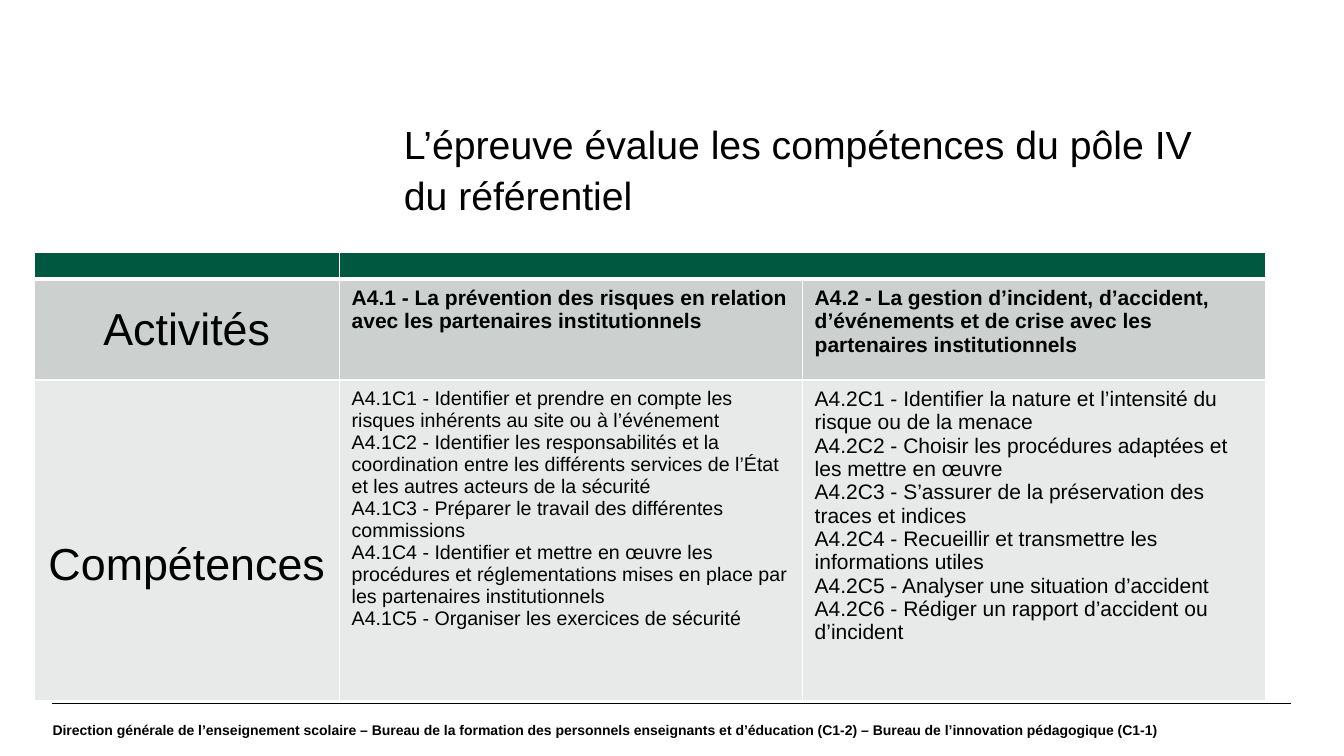
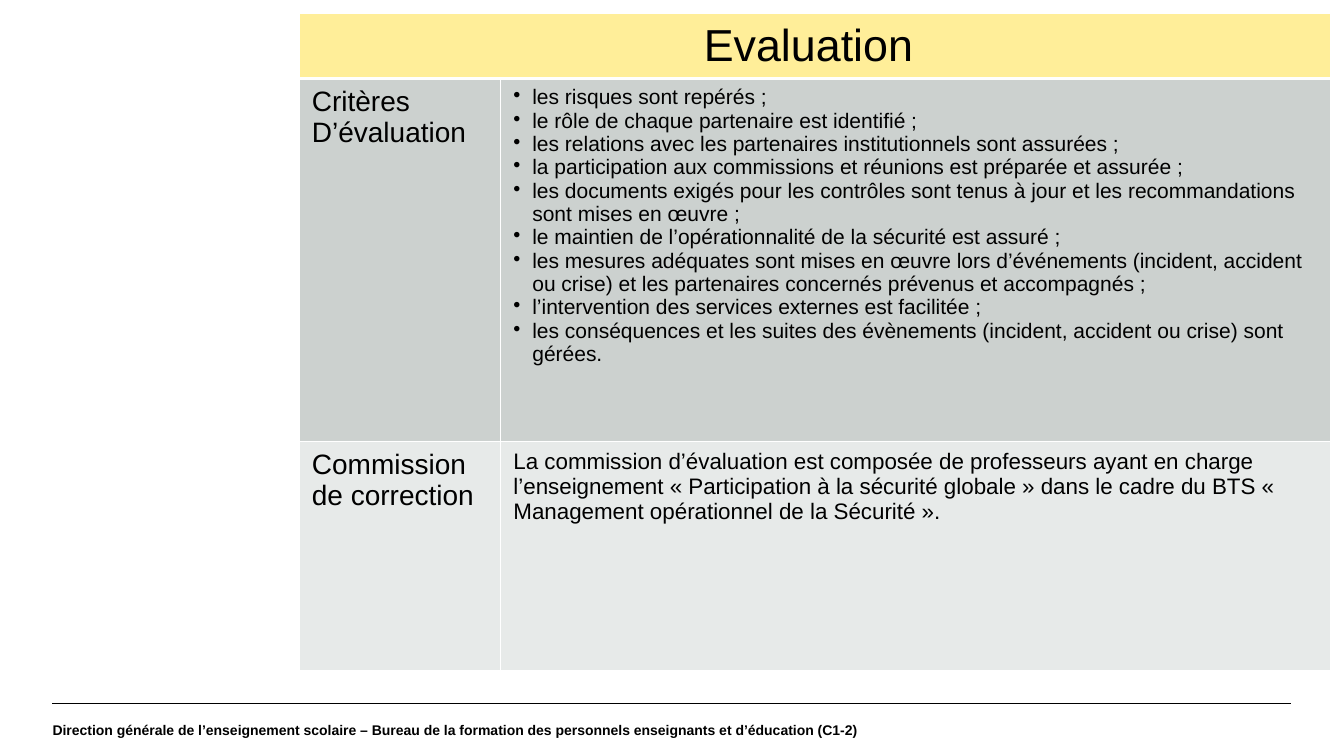
from dataclasses import dataclass

from pptx import Presentation
from pptx.dml.color import RGBColor
from pptx.enum.shapes import MSO_CONNECTOR
from pptx.enum.text import MSO_ANCHOR, MSO_AUTO_SIZE, PP_ALIGN
from pptx.oxml.ns import qn
from pptx.oxml.xmlchemy import OxmlElement
from pptx.util import Emu, Pt


@dataclass(frozen=True)
class Theme:
    font: str = "Arial"
    ink: str = "000000"
    rule: str = "FFFFFF"
    green: str = "005841"
    yellow: str = "FFEE99"
    grey: str = "CCD1CF"
    pale: str = "E7EAE9"
    title: int = 28
    heading: int = 32
    label: int = 20
    text: int = 16
    body: int = 15
    small: int = 14
    footer: int = 10


THEME = Theme()
TITLE_ONLY, BLANK = 5, 6
LEFT, CENTER = PP_ALIGN.LEFT, PP_ALIGN.CENTER
TOP, MIDDLE = MSO_ANCHOR.TOP, MSO_ANCHOR.MIDDLE

OFFICE = (
    "Direction générale de l’enseignement scolaire – Bureau de la formation "
    "des personnels enseignants et d’éducation (C1-2)"
)
PREVENTION_SKILLS = [
    "A4.1C1 - Identifier et prendre en compte les risques inhérents au site ou à l’événement",
    "A4.1C2 - Identifier les responsabilités et la coordination entre les différents "
    "services de l’État et les autres acteurs de la sécurité",
    "A4.1C3 - Préparer le travail des différentes commissions",
    "A4.1C4 - Identifier et mettre en œuvre les procédures et réglementations "
    "mises en place par les partenaires institutionnels",
    "A4.1C5 - Organiser les exercices de sécurité",
]
INCIDENT_SKILLS = [
    "A4.2C1 - Identifier la nature et l’intensité du risque ou de la menace",
    "A4.2C2 - Choisir les procédures adaptées et les mettre en œuvre",
    "A4.2C3 - S’assurer de la préservation des traces et indices",
    "A4.2C4 - Recueillir et transmettre les informations utiles",
    "A4.2C5 - Analyser une situation d’accident",
    "A4.2C6 - Rédiger un rapport d’accident ou d’incident",
]
CRITERIA = [
    "les risques sont repérés ;",
    "le rôle de chaque partenaire est identifié ;",
    "les relations avec les partenaires institutionnels sont assurées ;",
    "la participation aux commissions et réunions est préparée et assurée ;",
    "les documents exigés pour les contrôles sont tenus à jour et les "
    "recommandations sont mises en œuvre ;",
    "le maintien de l’opérationnalité de la sécurité est assuré ;",
    "les mesures adéquates sont mises en œuvre lors d’événements (incident, accident "
    "ou crise) et les partenaires concernés prévenus et accompagnés ;",
    "l’intervention des services externes est facilitée ;",
    "les conséquences et les suites des évènements (incident, accident ou crise) sont gérées.",
]


def px(n):
    return Emu(n * 9525)


def rgb(value):
    return RGBColor.from_string(value)


def add_run(p, text, size, bold=False):
    r = p.add_run()
    r.text = text
    r.font.name = THEME.font
    r.font.size = Pt(size)
    r.font.bold = bold
    r.font.color.rgb = rgb(THEME.ink)


def add_bullet(p, indent=18):
    pPr = p._p.get_or_add_pPr()
    pPr.set("marL", str(px(indent)))
    pPr.set("indent", str(-px(indent)))
    bullet = OxmlElement("a:buChar")
    bullet.set("char", "•")
    pPr.append(bullet)


def write(tf, lines, size, bold=False, align=LEFT, bullets=False):
    for i, line in enumerate(lines):
        p = tf.add_paragraph() if i else tf.paragraphs[0]
        p.alignment = align
        if bullets:
            add_bullet(p)
        add_run(p, line, size, bold)


def set_margins(box, left, top, right, bottom):
    box.margin_left, box.margin_top = px(left), px(top)
    box.margin_right, box.margin_bottom = px(right), px(bottom)


def set_borders(cell, bottom=1):
    tcPr = cell._tc.get_or_add_tcPr()
    widths = {"lnL": 1, "lnR": 1, "lnT": 1, "lnB": bottom}
    for i, (side, width) in enumerate(widths.items()):
        ln = OxmlElement(f"a:{side}")
        ln.set("w", str(Pt(width)))
        fill = OxmlElement("a:solidFill")
        color = OxmlElement("a:srgbClr")
        color.set("val", THEME.rule)
        fill.append(color)
        ln.append(fill)
        tcPr.insert(i, ln)


def fill_cell(cell, lines, size, anchor=TOP, top=7, **style):
    set_margins(cell, 12, top, 12, 7)
    cell.vertical_anchor = anchor
    write(cell.text_frame, lines, size, **style)


def add_table(slide, x, y, cols, rows, colors):
    frame = slide.shapes.add_table(
        len(rows), len(cols), px(x), px(y), px(sum(cols)), px(sum(rows))
    )
    table = frame.table
    table.first_row = table.horz_banding = False
    for col, width in zip(table.columns, cols):
        col.width = px(width)
    for i, (row, height, color) in enumerate(zip(table.rows, rows, colors)):
        row.height = px(height)
        for cell in row.cells:
            cell.fill.solid()
            cell.fill.fore_color.rgb = rgb(color)
            set_borders(cell, bottom=1 if i else 3)
    return table


def flatten_cell(cell):
    set_margins(cell, 0, 0, 0, 0)
    end = OxmlElement("a:endParaRPr")
    end.set("sz", str(THEME.footer * 100))
    cell.text_frame.paragraphs[0]._p.append(end)


def add_title(slide, text, x, y, w, h):
    sp = slide.shapes.title
    sp.left, sp.top, sp.width, sp.height = px(x), px(y), px(w), px(h)
    tf = sp.text_frame
    tf.word_wrap = True
    tf.auto_size = MSO_AUTO_SIZE.NONE
    tf.vertical_anchor = TOP
    write(tf, [text], THEME.title)
    tf.paragraphs[0].line_spacing = 1.07


def add_footer(slide, text):
    sp = slide.shapes.add_textbox(px(50), px(670), px(1194), px(50))
    tf = sp.text_frame
    tf.word_wrap = True
    tf.vertical_anchor = MIDDLE
    set_margins(tf, 0, 0, 0, 0)
    write(tf, [text], THEME.footer, bold=True)


def add_master_rule(prs, slide):
    line = slide.shapes.add_connector(
        MSO_CONNECTOR.STRAIGHT, px(50), px(670), px(1230), px(670)
    )
    line.line.color.rgb = rgb(THEME.ink)
    line.line.width = Pt(0.8)
    line.element.find(qn("p:spPr")).append(OxmlElement("a:effectLst"))
    line.element.nvCxnSpPr.cNvPr.set("id", "20")
    prs.slide_master.shapes.element.append(line.element)


def build_skills(slide):
    add_title(slide, "L’épreuve évalue les compétences du pôle IV du référentiel",
              375, 107, 786, 100)
    table = add_table(slide, 33, 240, [290, 441, 441], [26, 96, 305],
                      [THEME.green, THEME.grey, THEME.pale])
    for cell in table.rows[0].cells:
        flatten_cell(cell)
    table.cell(0, 1).merge(table.cell(0, 2))
    fill_cell(table.cell(1, 0), ["Activités"], THEME.heading, MIDDLE, align=CENTER)
    fill_cell(table.cell(2, 0), ["Compétences"], THEME.heading, MIDDLE, top=55, align=CENTER)
    activities = [
        "A4.1 - La prévention des risques en relation avec les partenaires institutionnels",
        "A4.2 - La gestion d’incident, d’accident, d’événements et de crise "
        "avec les partenaires institutionnels",
    ]
    for col, activity in enumerate(activities, 1):
        fill_cell(table.cell(1, col), [activity], THEME.body, bold=True)
    fill_cell(table.cell(2, 1), PREVENTION_SKILLS, THEME.small)
    fill_cell(table.cell(2, 2), INCIDENT_SKILLS, THEME.body)
    add_footer(slide, f"{OFFICE} – Bureau de l’innovation pédagogique (C1-1)")


def build_evaluation(slide):
    table = add_table(slide, 285, 13, [192, 790], [60, 346, 218],
                      [THEME.yellow, THEME.grey, THEME.pale])
    table.cell(0, 0).merge(table.cell(0, 1))
    fill_cell(table.cell(0, 0), ["Evaluation "], THEME.heading, align=CENTER)
    for row, label in enumerate(["Critères D’évaluation", "Commission de correction"], 1):
        fill_cell(table.cell(row, 0), [label], THEME.label)
    fill_cell(table.cell(1, 1), CRITERIA, THEME.body, bullets=True)
    fill_cell(table.cell(2, 1), [
        "La commission d’évaluation est composée de professeurs ayant en charge "
        "l’enseignement « Participation à la sécurité globale » dans le cadre du BTS "
        "« Management opérationnel de la Sécurité »."
    ], THEME.text)
    add_footer(slide, OFFICE)


def main():
    prs = Presentation()
    prs.slide_width, prs.slide_height = px(1280), px(720)
    skills = prs.slides.add_slide(prs.slide_layouts[TITLE_ONLY])
    add_master_rule(prs, skills)
    build_skills(skills)
    build_evaluation(prs.slides.add_slide(prs.slide_layouts[BLANK]))
    prs.save("out.pptx")


if __name__ == "__main__":
    main()
